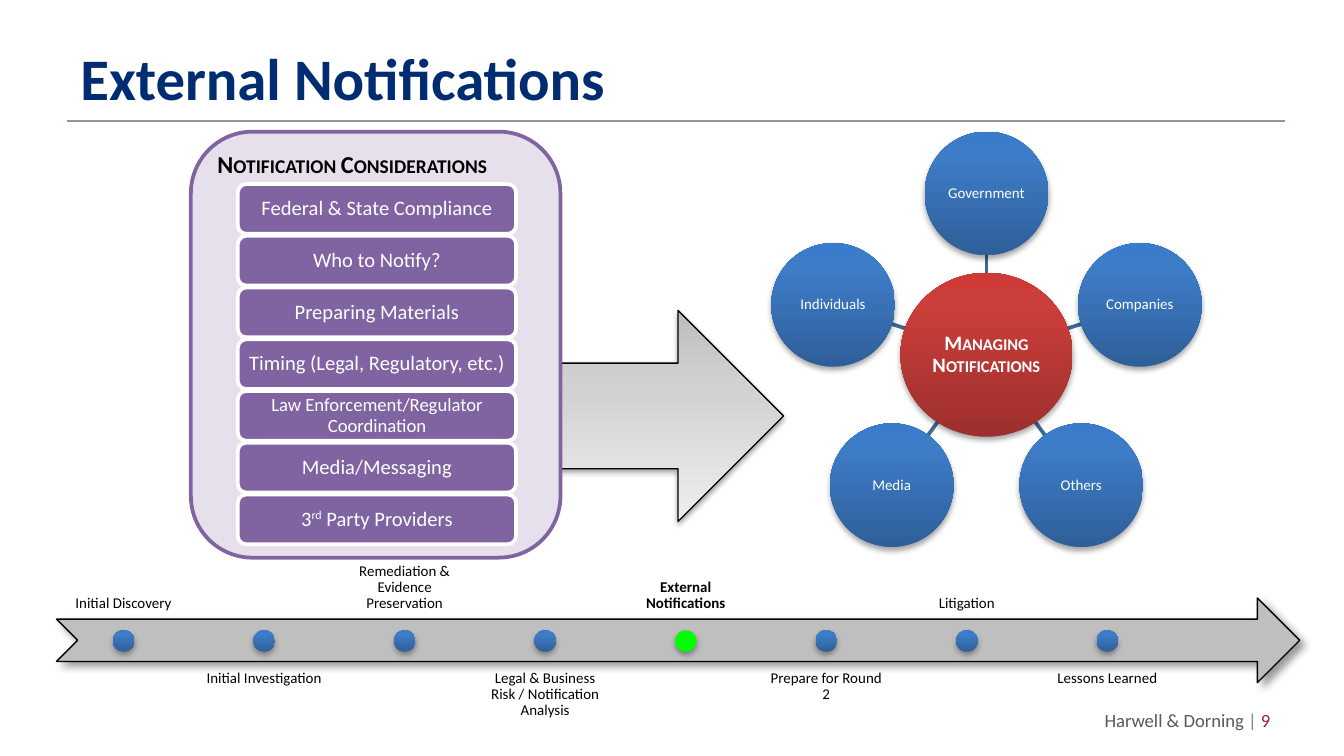
"""Build the External Notifications slide."""
from math import cos, radians, sin

from lxml import etree
from pptx import Presentation
from pptx.dml.color import RGBColor
from pptx.enum.shapes import MSO_CONNECTOR, MSO_SHAPE
from pptx.enum.text import MSO_ANCHOR, PP_ALIGN
from pptx.oxml.ns import qn
from pptx.util import Inches, Pt

OVAL, ROUND = MSO_SHAPE.OVAL, MSO_SHAPE.ROUNDED_RECTANGLE
LEFT_ARROW, NOTCHED = MSO_SHAPE.LEFT_ARROW, MSO_SHAPE.NOTCHED_RIGHT_ARROW
STRAIGHT = MSO_CONNECTOR.STRAIGHT
TOP, MIDDLE, BOTTOM = MSO_ANCHOR.TOP, MSO_ANCHOR.MIDDLE, MSO_ANCHOR.BOTTOM
LEFT, CENTER, RIGHT = PP_ALIGN.LEFT, PP_ALIGN.CENTER, PP_ALIGN.RIGHT

FONT = "Calibri"
BLUE = [(0, "2F5F99"), (80, "3D7CC7"), (100, "3A7CCB")]
RED = [(0, "9C2F2D"), (80, "CB3E3A"), (100, "CE3B37")]
GREY = [(0, "BDBDBD"), (35, "D1D1D1"), (100, "EEEEEE")]
SOFT = (35, 3.1, 1.8, 90)

TITLE = "External Notifications"
HEADING = "Notification Considerations"
HUB = "Managing Notifications"
FOOTER = [("Harwell & Dorning ", {"color": "595959"}),
          ("| ", {"color": "808080"}), ("9", {"color": "9D2235"})]
TOPICS = [
    ([("Federal & State Compliance", {})], 11),
    ([("Who to Notify?", {})], 11),
    ([("Preparing Materials", {})], 11),
    ([("Timing (Legal, Regulatory, etc.)", {})], 11),
    ([("Law Enforcement/Regulator Coordination", {})], 10),
    ([("Media/Messaging", {})], 11),
    ([("3", {}), ("rd", {"baseline": "30000"}), (" Party Providers", {})], 11),
]
PARTIES = ["Government", "Companies", "Others", "Media", "Individuals"]
STAGES = ["Initial Discovery", "Initial Investigation",
          "Remediation & Evidence Preservation",
          "Legal & Business Risk / Notification Analysis",
          "External Notifications", "Prepare for Round 2",
          "Litigation", "Lessons Learned"]
CURRENT = 4

deck = Presentation()
deck.slide_width = Inches(10)
deck.slide_height = deck.slide_width * 9 // 16
slide = deck.slides.add_slide(deck.slide_layouts[6])
shapes = slide.shapes


def rgb(code):
    return RGBColor.from_string(code)


def child(parent, tag, **attrs):
    return etree.SubElement(parent, qn(tag), attrs)


def shade(shape, stops):
    shape.fill.gradient()
    shape.fill.gradient_angle = 90
    ramp = shape._element.spPr.find(qn("a:gradFill")).find(qn("a:gsLst"))
    for stop in list(ramp):
        ramp.remove(stop)
    for place, code in stops:
        stop = child(ramp, "a:gs", pos=str(place * 1000))
        child(stop, "a:srgbClr", val=code)


def cast(shape, alpha, blur, dist, angle):
    effects = shape._element.spPr.find(qn("a:effectLst"))
    drop = child(effects, "a:outerShdw", blurRad=str(Pt(blur)),
                 dist=str(Pt(dist)), dir=str(angle * 60000), rotWithShape="0")
    black = child(drop, "a:srgbClr", val="000000")
    child(black, "a:alpha", val=str(alpha * 1000))


def draw(kind, box, fill, line=None, shadow=None):
    shape = shapes.add_shape(kind, *map(Inches, box))
    if isinstance(fill, str):
        shape.fill.solid()
        shape.fill.fore_color.rgb = rgb(fill)
    else:
        shade(shape, fill)
    if line:
        shape.line.color.rgb, shape.line.width = rgb(line[0]), Pt(line[1])
    else:
        shape.line.fill.background()
    shape.shadow.inherit = False
    if shadow:
        cast(shape, *shadow)
    return shape


def write(shape, runs, size, color="000000", align=CENTER, anchor=MIDDLE,
          pad=(0.1, 0.05), bold=False, small=False, wrap=True, space=None):
    frame = shape.text_frame
    frame.word_wrap, frame.vertical_anchor = wrap, anchor
    frame.margin_left = frame.margin_right = Inches(pad[0])
    frame.margin_top = frame.margin_bottom = Inches(pad[1])
    para = frame.paragraphs[0]
    para.alignment, para.line_spacing = align, space
    for text, style in runs:
        run = para.add_run()
        run.text = text
        font = run.font
        font.name, font.size, font.bold = FONT, Pt(size), bold
        font.color.rgb = rgb(style.get("color", color))
        props = run._r.get_or_add_rPr()
        if small:
            props.set("cap", "small")
        if "baseline" in style:
            props.set("baseline", style["baseline"])


def label(box, runs, size, **style):
    write(shapes.add_textbox(*map(Inches, box)), runs, size, **style)


def rule(ends, color, width):
    line = shapes.add_connector(STRAIGHT, *map(Inches, ends))
    line.line.color.rgb, line.line.width = rgb(color), Pt(width)
    child(line._element.spPr, "a:effectLst")


def disc(x, y, wide, high, fill, text, size, **style):
    shape = draw(OVAL, (x - wide / 2, y - high / 2, wide, high), fill,
                 shadow=SOFT)
    write(shape, [(text, {})], size, color="FFFFFF", pad=(0.01, 0.01),
          space=0.9, **style)


def frame_page():
    rule((0.5, 0.9, 9.56, 0.9), "9D968D", 0.75)
    arrow = draw(LEFT_ARROW, (3.83, 2.31, 2, 1.57), GREY, ("000000", 0.75),
                 (38, 3.1, 1.6, 90))
    arrow.rotation = 180
    label((0.5, 0.23, 9.08, 0.68), [(TITLE, {})], 31.5, color="002D72",
          align=LEFT, bold=True)
    label((7.22, 5.22, 2.33, 0.27), FOOTER, 10, align=RIGHT)


def add_time():
    draw(NOTCHED, (0.42, 4.45, 9.25, 0.63), "BFBFBF", ("000000", 0.75),
         (40, 4, 3, 45))
    step = 7.32 / (len(STAGES) - 1)
    for i, stage in enumerate(STAGES):
        mid, now = 0.92 + i * step, i == CURRENT
        top, anchor = (4.93, TOP) if i % 2 else (3.98, BOTTOM)
        label((mid - 0.5, top, 1, 0.63), [(stage, {})], 8, anchor=anchor,
              pad=(0.06, 0.06), bold=now, space=0.9)
        draw(OVAL, (mid - 0.08, 4.69, 0.16, 0.16),
             "00FF00" if now else BLUE, shadow=SOFT)


def add_wheel():
    x, y, reach = 7.34, 2.64, 1.2
    turns = [radians(360 / len(PARTIES) * i) for i in range(len(PARTIES))]
    for turn in turns:
        ends = [(x + r * sin(turn), y - r * cos(turn)) for r in (0.61, 0.74)]
        rule((*ends[0], *ends[1]), "3F6797", 2)
    disc(x, y, 1.28, 1.22, RED, HUB, 11, bold=True, small=True)
    for turn, party in zip(turns, PARTIES):
        disc(x + reach * sin(turn), y - reach * cos(turn), 0.92, 0.92, BLUE,
             party, 8)


def add_panel():
    draw(ROUND, (1.42, 0.98, 2.75, 3.17), "E6E0EC", ("8064A2", 2))
    step = 2.31 / (len(TOPICS) - 1)
    for i, (runs, size) in enumerate(TOPICS):
        bar = draw(ROUND, (1.77, 1.37 + i * step, 2.07, 0.37), "8064A2",
                   ("FFFFFF", 2))
        write(bar, runs, size, color="FFFFFF", pad=(0.04, 0.04), space=0.9)
    label((1.52, 1.06, 2.23, 0.59), [(HEADING, {})], 13, align=LEFT,
          anchor=TOP, bold=True, small=True, wrap=False)


frame_page()
add_time()
add_wheel()
add_panel()
deck.save("out.pptx")
